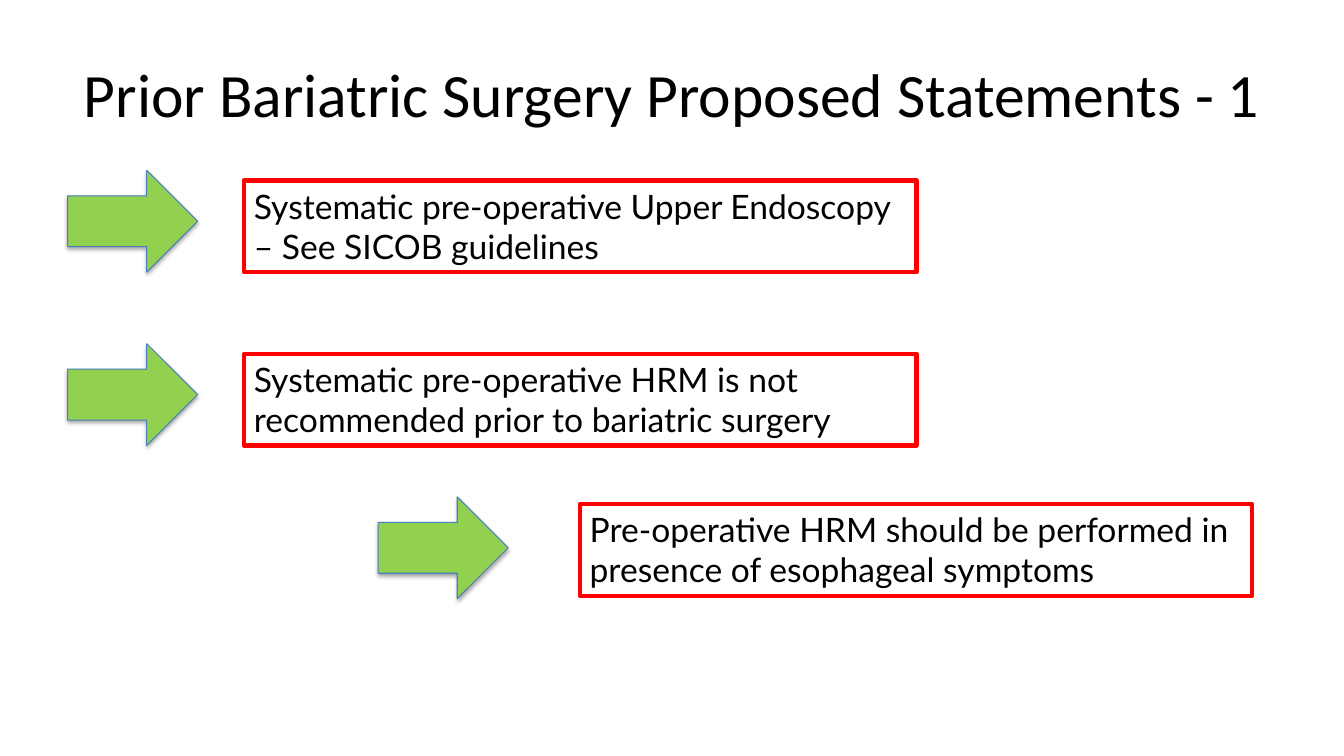
from pptx import Presentation
from pptx.dml.color import RGBColor
from pptx.enum.shapes import MSO_SHAPE
from pptx.enum.text import MSO_ANCHOR, MSO_AUTO_SIZE, PP_ALIGN
from pptx.util import Inches, Pt

RIGHT_ARROW = MSO_SHAPE.RIGHT_ARROW
MIDDLE = MSO_ANCHOR.MIDDLE
TOP = MSO_ANCHOR.TOP
FIT_SHAPE = MSO_AUTO_SIZE.SHAPE_TO_FIT_TEXT
CENTER = PP_ALIGN.CENTER
LEFT = PP_ALIGN.LEFT
TITLE_ONLY = 5

COLORS = {
    "text": "000000",
    "arrow": "92D050",
    "arrow_line": "4B7EBC",
    "frame": "FF0000",
}

ARROW_WIDTH, ARROW_HEIGHT = 1.29, 1.01
FRAME_WIDTH, FRAME_HEIGHT = 6.67, 0.91

STATEMENTS = [
    ("Systematic pre-operative Upper Endoscopy – See SICOB guidelines",
     0.67, 1.69, 1.75, 0.1),
    ("Systematic pre-operative HRM is not recommended prior to bariatric surgery",
     0.67, 3.41, 1.75, 0.1),
    ("Pre-operative HRM should be performed in presence of esophageal symptoms",
     3.75, 4.93, 2, 0.07),
]


def color(name):
    return RGBColor.from_string(COLORS[name])


def format_text(paragraph, font_name, size, alignment):
    paragraph.alignment = alignment
    paragraph.font.name = font_name
    paragraph.font.size = Pt(size)
    paragraph.font.color.rgb = color("text")


def set_title(slide, text, left, top, width, height):
    title = slide.shapes.title
    title.left, title.top = Inches(left), Inches(top)
    title.width, title.height = Inches(width), Inches(height)
    title.text_frame.text = text
    title.text_frame.vertical_anchor = MIDDLE
    format_text(title.text_frame.paragraphs[0], "Calibri", 44, CENTER)


def add_arrow(slide, left, top):
    arrow = slide.shapes.add_shape(
        RIGHT_ARROW, Inches(left), Inches(top),
        Inches(ARROW_WIDTH), Inches(ARROW_HEIGHT))
    arrow.fill.solid()
    arrow.fill.fore_color.rgb = color("arrow")
    arrow.line.color.rgb = color("arrow_line")
    arrow.line.width = Pt(0.75)


def add_frame(slide, text, left, top):
    frame = slide.shapes.add_textbox(
        Inches(left), Inches(top), Inches(FRAME_WIDTH), Inches(FRAME_HEIGHT))
    frame.line.color.rgb = color("frame")
    frame.line.width = Pt(3)
    text_frame = frame.text_frame
    text_frame.word_wrap = True
    text_frame.auto_size = FIT_SHAPE
    text_frame.vertical_anchor = TOP
    text_frame.text = text
    format_text(text_frame.paragraphs[0], "Lato", 24, LEFT)


def add_statement(slide, text, left, top, frame_offset, frame_drop):
    add_arrow(slide, left, top)
    add_frame(slide, text, left + frame_offset, top + frame_drop)


def main():
    presentation = Presentation()
    presentation.slide_width = Inches(13.33)
    presentation.slide_height = Inches(7.5)
    slide = presentation.slides.add_slide(presentation.slide_layouts[TITLE_ONLY])
    set_title(slide, "Prior Bariatric Surgery Proposed Statements - 1",
              0.67, 0.3, 12, 1.25)
    for statement in STATEMENTS:
        add_statement(slide, *statement)
    presentation.save("out.pptx")


if __name__ == "__main__":
    main()
